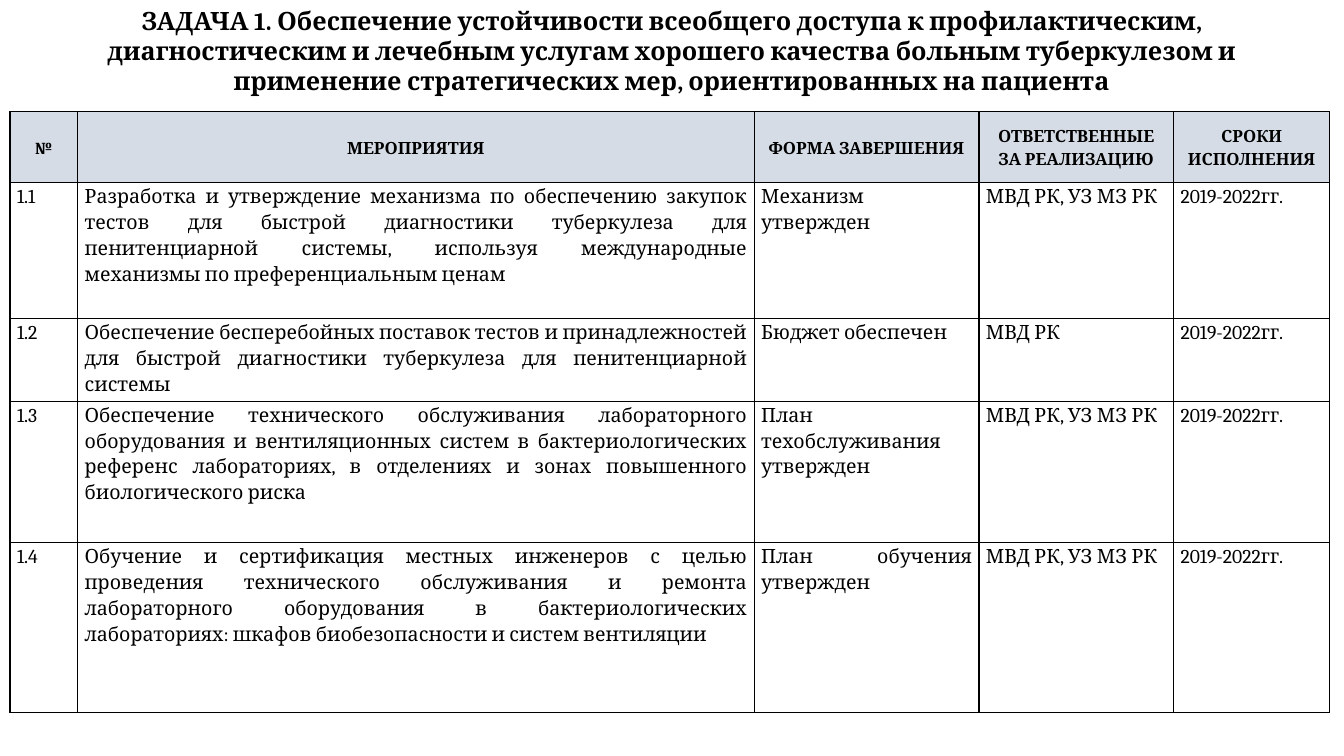
from lxml.etree import SubElement
from pptx import Presentation
from pptx.dml.color import RGBColor
from pptx.enum.text import MSO_ANCHOR as Anchor, MSO_AUTO_SIZE as AutoSize, PP_ALIGN as Align
from pptx.oxml.ns import qn
from pptx.util import Inches, Pt

TITLE = (
    "ЗАДАЧА 1. Обеспечение устойчивости всеобщего доступа к профилактическим, "
    "диагностическим и лечебным услугам хорошего качества больным туберкулезом и "
    "применение стратегических мер, ориентированных на пациента"
)
HEADINGS = ["№", "МЕРОПРИЯТИЯ", "ФОРМА ЗАВЕРШЕНИЯ", "ОТВЕТСТВЕННЫЕ ЗА РЕАЛИЗАЦИЮ", "СРОКИ ИСПОЛНЕНИЯ"]
PERIOD = "2019-2022гг."
BOTH_BODIES = "МВД РК, УЗ МЗ РК"
ACTIVITIES = [
    ("Разработка и утверждение механизма по обеспечению закупок тестов для быстрой диагностики "
     "туберкулеза для пенитенциарной системы, используя международные механизмы по "
     "преференциальным ценам", "Механизм утвержден", BOTH_BODIES),
    ("Обеспечение бесперебойных поставок тестов и принадлежностей для быстрой диагностики "
     "туберкулеза для пенитенциарной системы", "Бюджет обеспечен", "МВД РК"),
    ("Обеспечение технического обслуживания лабораторного оборудования и вентиляционных систем "
     "в бактериологических референс лабораториях, в отделениях и зонах повышенного "
     "биологического риска", "План техобслуживания утвержден", BOTH_BODIES),
    ("Обучение и сертификация местных инженеров с целью проведения технического обслуживания "
     "и ремонта лабораторного оборудования в бактериологических лабораториях: шкафов "
     "биобезопасности и систем вентиляции", "План обучения утвержден", BOTH_BODIES),
]
COLUMN_WIDTHS = [0.67, 6.71, 2.23, 1.93, 1.55]
ROW_HEIGHTS = [0.7, 1.35, 0.82, 1.4, 1.69]


def color(value):
    return RGBColor.from_string(value)


class PlanSlide:
    font = "Cambria"
    ink = "000000"
    header_fill = "D6DCE5"

    def __init__(self, page):
        self.page = page

    def add_text(self, para, text, size, bold, align):
        para.alignment = align
        span = para.add_run()
        span.text = text
        span.font.name = self.font
        span.font.size = Pt(size)
        span.font.bold = bold
        span.font.color.rgb = color(self.ink)

    def title(self, text, left, top, width, height):
        box = self.page.shapes.add_textbox(Inches(left), Inches(top), Inches(width), Inches(height))
        frame = box.text_frame
        frame.word_wrap = True
        frame.auto_size = AutoSize.SHAPE_TO_FIT_TEXT
        self.add_text(frame.paragraphs[0], text, 18, True, Align.CENTER)

    def borders(self, cell):
        properties = cell._tc.get_or_add_tcPr()
        for side in ("a:lnL", "a:lnR", "a:lnT", "a:lnB"):
            line = SubElement(properties, qn(side), w=str(Pt(1)))
            fill = SubElement(line, qn("a:solidFill"))
            SubElement(fill, qn("a:srgbClr"), val=self.ink)

    def cell(self, cell, text, is_header):
        self.borders(cell)
        cell.margin_left = cell.margin_right = Inches(0.07)
        cell.margin_top = cell.margin_bottom = 0
        para = cell.text_frame.paragraphs[0]
        para.line_spacing = 1.15
        if is_header:
            cell.vertical_anchor = Anchor.MIDDLE
            cell.fill.solid()
            cell.fill.fore_color.rgb = color(self.header_fill)
            self.add_text(para, text, 12, True, Align.CENTER)
        else:
            cell.vertical_anchor = Anchor.TOP
            cell.fill.background()
            para.space_after = Pt(10)
            self.add_text(para, text, 14, False, Align.JUSTIFY)

    def table(self, rows, left, top, widths, heights):
        table = self.page.shapes.add_table(
            len(rows), len(widths), Inches(left), Inches(top),
            Inches(sum(widths)), Inches(sum(heights))).table
        table.first_row = table.horz_banding = False
        for column, width in zip(table.columns, widths):
            column.width = Inches(width)
        for row, height in zip(table.rows, heights):
            row.height = Inches(height)
        for row_index, texts in enumerate(rows):
            for column_index, text in enumerate(texts):
                self.cell(table.cell(row_index, column_index), text, row_index == 0)


def main():
    deck = Presentation()
    deck.slide_width = Inches(13.33)
    deck.slide_height = Inches(7.5)
    plan = PlanSlide(deck.slides.add_slide(deck.slide_layouts[6]))
    plan.title(TITLE, 0.12, 0, 13.09, 1.01)
    rows = [HEADINGS]
    for number, activity in enumerate(ACTIVITIES, start=1):
        rows.append([f"1.{number}", *activity, PERIOD])
    plan.table(rows, 0.1, 1.11, COLUMN_WIDTHS, ROW_HEIGHTS)
    deck.save("out.pptx")


if __name__ == "__main__":
    main()
